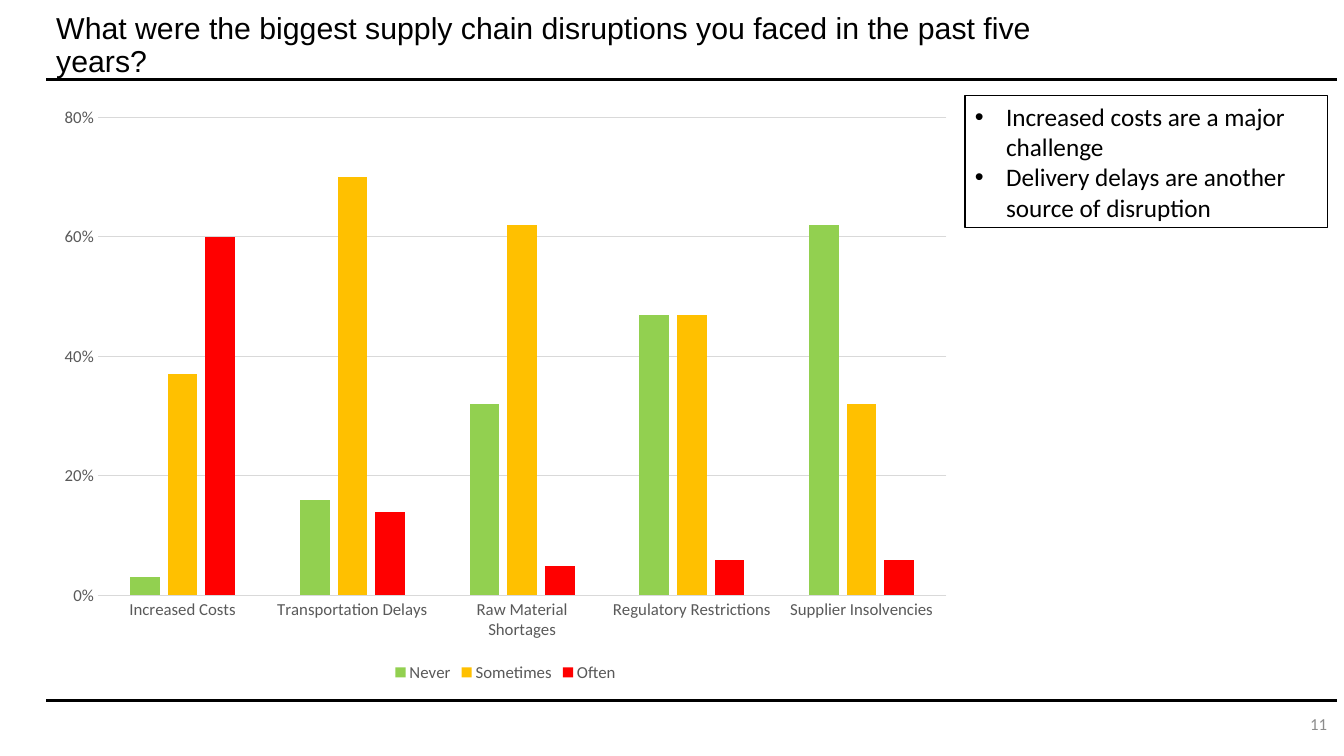
from lxml import etree
from pptx import Presentation
from pptx.chart.data import CategoryChartData
from pptx.dml.color import RGBColor
from pptx.enum.chart import XL_CHART_TYPE, XL_LEGEND_POSITION, XL_TICK_MARK
from pptx.enum.shapes import MSO_CONNECTOR, MSO_SHAPE
from pptx.enum.text import MSO_ANCHOR, PP_ALIGN
from pptx.oxml.ns import qn
from pptx.util import Inches, Pt

CLUSTERED = XL_CHART_TYPE.COLUMN_CLUSTERED
LEGEND_BOTTOM = XL_LEGEND_POSITION.BOTTOM
NO_TICK = XL_TICK_MARK.NONE
STRAIGHT = MSO_CONNECTOR.STRAIGHT
RECTANGLE = MSO_SHAPE.RECTANGLE
MIDDLE = MSO_ANCHOR.MIDDLE
LEFT, RIGHT = PP_ALIGN.LEFT, PP_ALIGN.RIGHT


def color(value):
    return RGBColor.from_string(value)


def set_font(font, name, size, value):
    font.name = name
    font.size = Pt(size)
    font.color.rgb = color(value)


deck = Presentation()
deck.slide_width = Inches(13.33)
deck.slide_height = Inches(7.5)
page = deck.slides.add_slide(deck.slide_layouts[6])

# Rules above and below the content
for top in (0.79, 6.95):
    rule = page.shapes.add_connector(
        STRAIGHT, Inches(0.46), Inches(top), Inches(13.26), Inches(top))
    rule.line.color.rgb = color("000000")
    rule.line.width = Pt(0)
    etree.SubElement(rule._element.spPr, qn("a:effectLst"))

# Title and page number
labels = [
    ("What were the biggest supply chain disruptions you faced in the past five years?",
     (0.46, 0.19, 10.03, 0.54), "Arial", 21.6, "000000", LEFT, 0.9),
    ("11", (9.42, 7.02, 3.84, 0.33), "Calibri", 12, "8C8C8C", RIGHT, 1.0),
]
for text, place, font_name, size, text_color, alignment, spacing in labels:
    box = page.shapes.add_textbox(*[Inches(length) for length in place])
    box.text_frame.word_wrap = True
    box.text_frame.vertical_anchor = MIDDLE
    para = box.text_frame.paragraphs[0]
    para.text = text
    para.alignment = alignment
    para.line_spacing = spacing
    set_font(para.font, font_name, size, text_color)

# Disruption chart
series_data = [
    ("Never", (0.03, 0.16, 0.32, 0.47, 0.62), "92D050"),
    ("Sometimes", (0.37, 0.70, 0.62, 0.47, 0.32), "FFC000"),
    ("Often", (0.60, 0.14, 0.05, 0.06, 0.06), "FF0000"),
]
data = CategoryChartData(number_format="0%")
data.categories = ["Increased Costs", "Transportation Delays", "Raw Material Shortages",
                   "Regulatory Restrictions", "Supplier Insolvencies"]
for name, values, _ in series_data:
    data.add_series(name, values)
chart = page.shapes.add_chart(
    CLUSTERED, Inches(0.46), Inches(0.95), Inches(9.11), Inches(5.86), data).chart
set_font(chart.font, "Calibri", 12, "000000")
chart.has_title = False

plot = chart.plots[0]
plot.gap_width = 219
plot.overlap = -27
plot.vary_by_categories = False
for series, (_, _, fill_color) in zip(plot.series, series_data):
    series.format.fill.solid()
    series.format.fill.fore_color.rgb = color(fill_color)

# Axes and legend
category_axis, value_axis = chart.category_axis, chart.value_axis
for axis in (category_axis, value_axis):
    axis.major_tick_mark = NO_TICK
    axis.minor_tick_mark = NO_TICK
    set_font(axis.tick_labels.font, "Calibri", 12, "595959")
value_axis.minimum_scale = 0
value_axis.maximum_scale = 0.8
value_axis.major_unit = 0.2
value_axis.tick_labels.number_format = "0%"
value_axis.tick_labels.number_format_is_linked = False
value_axis.format.line.fill.background()
for line in (category_axis.format.line, value_axis.major_gridlines.format.line):
    line.color.rgb = color("D9D9D9")
    line.width = Pt(0.75)
chart.has_legend = True
chart.legend.position = LEGEND_BOTTOM
chart.legend.include_in_layout = False
set_font(chart.legend.font, "Calibri", 12, "595959")

# Key findings
findings = page.shapes.add_shape(
    RECTANGLE, Inches(9.57), Inches(0.95), Inches(3.6), Inches(1.31))
findings.shadow.inherit = False
findings.fill.solid()
findings.fill.fore_color.rgb = color("FFFFFF")
findings.line.color.rgb = color("000000")
findings.line.width = Pt(1)
frame = findings.text_frame
frame.word_wrap = True
frame.vertical_anchor = MIDDLE
frame.text = ("Increased costs are a major challenge\n"
              "Delivery delays are another source of disruption")
for para in frame.paragraphs:
    para.alignment = LEFT
    properties = para._p.get_or_add_pPr()
    properties.set("marL", str(Inches(0.31)))
    properties.set("indent", str(Inches(-0.31)))
    etree.SubElement(properties, qn("a:buFont"), typeface="Arial")
    etree.SubElement(properties, qn("a:buChar"), char="•")
    set_font(para.font, "Calibri", 18, "000000")

deck.save("out.pptx")
